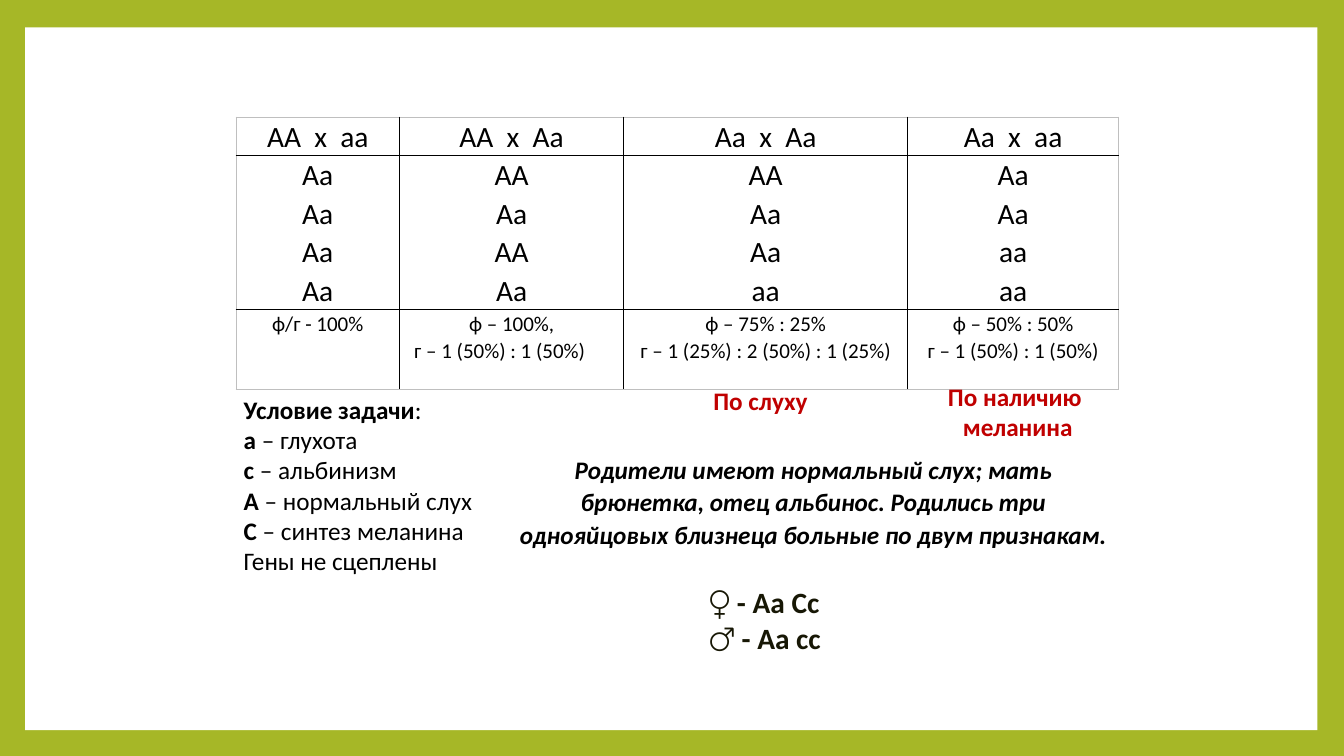
from pptx import Presentation
from pptx.dml.color import RGBColor
from pptx.enum.shapes import MSO_SHAPE
from pptx.enum.text import MSO_AUTO_SIZE, PP_ALIGN
from pptx.oxml.ns import qn
from pptx.util import Pt
from lxml import etree

RECT = MSO_SHAPE.RECTANGLE
GROW = MSO_AUTO_SIZE.SHAPE_TO_FIT_TEXT
LEFT, MID = PP_ALIGN.LEFT, PP_ALIGN.CENTER
HEX = {"frame": "A6B727", "page": "FFFFFF", "ink": "000000",
       "edge": "BFBFBF", "red": "C00000", "dark": "171705"}
FONT = "Calibri"
SPACING = 1.07

CROSSES = [
    ["АА  х  аа", "АА  х  Аа", "Аа  х  Аа", "Аа  х  аа"],
    ["Аа\nАа\nАа\nАа", "АА\nАа\nАА\nАа", "АА\nАа\nАа\nаа", "Аа\nАа\nаа\nаа"],
    ["ф/г - 100%", "ф – 100%,\nг – 1 (50%) : 1 (50%)",
     "ф – 75% : 25%\nг – 1 (25%) : 2 (50%) : 1 (25%)",
     "ф – 50% : 50%\nг – 1 (50%) : 1 (50%)"],
]
# Each line is a bold lead and a plain rest.
TERMS = [("Условие задачи", ":"), ("а", " – глухота"), ("с", " – альбинизм"),
         ("А", " – нормальный слух"), ("С", " – синтез меланина"),
         ("", "Гены не сцеплены")]
STORY = ("Родители имеют нормальный слух; мать брюнетка, отец альбинос. "
         "Родились три однояйцовых близнеца больные по двум признакам.")


class Board:
    def __init__(self, slide):
        self.slide = slide
        back = slide.background.fill
        back.solid()
        back.fore_color.rgb = self.color("frame")

    def color(self, name):
        return RGBColor.from_string(HEX[name])

    def style(self, run, size, color="ink", bold=False, italic=False):
        font = run.font
        font.name, font.size = FONT, Pt(size)
        font.bold, font.italic = bold, italic
        font.color.rgb = self.color(color)

    def panel(self, *box):
        shape = self.slide.shapes.add_shape(RECT, *map(Pt, box))
        shape.shadow.inherit = False
        shape.fill.solid()
        shape.fill.fore_color.rgb = self.color("page")
        shape.line.fill.background()

    def text(self, box, lines, size, color="ink", italic=False,
             align=LEFT, wrap=True, space=None, after=None):
        """Add a text box; each line is a pair of bold and plain text."""
        frame = self.slide.shapes.add_textbox(*map(Pt, box)).text_frame
        frame.word_wrap, frame.auto_size = wrap, GROW
        for i, line in enumerate(lines):
            para = frame.add_paragraph() if i else frame.paragraphs[0]
            para.alignment, para.line_spacing = align, space
            if after:
                para.space_after = Pt(after)
            for part, bold in zip(line, (True, False)):
                if part:
                    run = para.add_run()
                    run.text = part
                    self.style(run, size, color, bold, italic)

    def border(self, cell, side, color, width):
        props = cell._tc.get_or_add_tcPr()
        line = etree.SubElement(props, qn("a:ln" + side), w=str(Pt(width)))
        fill = etree.SubElement(line, qn("a:solidFill"))
        etree.SubElement(fill, qn("a:srgbClr"), val=HEX[color])

    def table(self, left, top, cols, rows, data, sizes):
        grid = self.slide.shapes.add_table(
            len(rows), len(cols), Pt(left), Pt(top),
            Pt(sum(cols)), Pt(sum(rows))).table
        grid.first_row = grid.horz_banding = False
        for col, width in zip(grid.columns, cols):
            col.width = Pt(width)
        for row, height in zip(grid.rows, rows):
            row.height = Pt(height)
        for r, line in enumerate(data):
            for c, words in enumerate(line):
                cell = grid.cell(r, c)
                outer = {"L": c == 0, "R": c == len(cols) - 1,
                         "T": r == 0, "B": r == len(rows) - 1}
                for side, edge in outer.items():
                    self.border(cell, side, *(("edge", 0.5) if edge else ("ink", 1)))
                cell.fill.background()
                cell.margin_left = cell.margin_right = Pt(4.5)
                cell.margin_top = cell.margin_bottom = 0
                cell.text_frame.text = words
                for para in cell.text_frame.paragraphs:
                    para.alignment, para.line_spacing = MID, SPACING
                    for run in para.runs:
                        self.style(run, sizes[r])
        return grid


def main():
    deck = Presentation()
    deck.slide_width, deck.slide_height = Pt(960), Pt(540)
    board = Board(deck.slides.add_slide(deck.slide_layouts[6]))
    board.panel(18, 19.5, 923, 502)
    grid = board.table(168.5, 83.5, [117, 160, 203, 150.5], [27, 108, 57.5],
                       CROSSES, [21, 21, 15])
    ratio = grid.cell(2, 1).text_frame.paragraphs[1]
    ratio._p.get_or_add_pPr().set("marR", str(Pt(17)))
    board.text((167, 278, 207, 138), TERMS, 18)
    board.text((360, 319.5, 442, 77), [(STORY,)], 18, italic=True,
               align=MID, space=SPACING, after=6)
    board.text((502.5, 271.5, 83, 29), [("По слуху",)], 18, "red", wrap=False)
    board.text((669.5, 268.5, 115, 51), [("По наличию ",), ("меланина",)], 18,
               "red", align=MID, wrap=False)
    board.text((499.5, 414, 95, 75), [("♀ - Аа Сс",), ("♂ - Аа сс",)], 21,
               "dark", wrap=False)
    deck.save("out.pptx")


if __name__ == "__main__":
    main()
